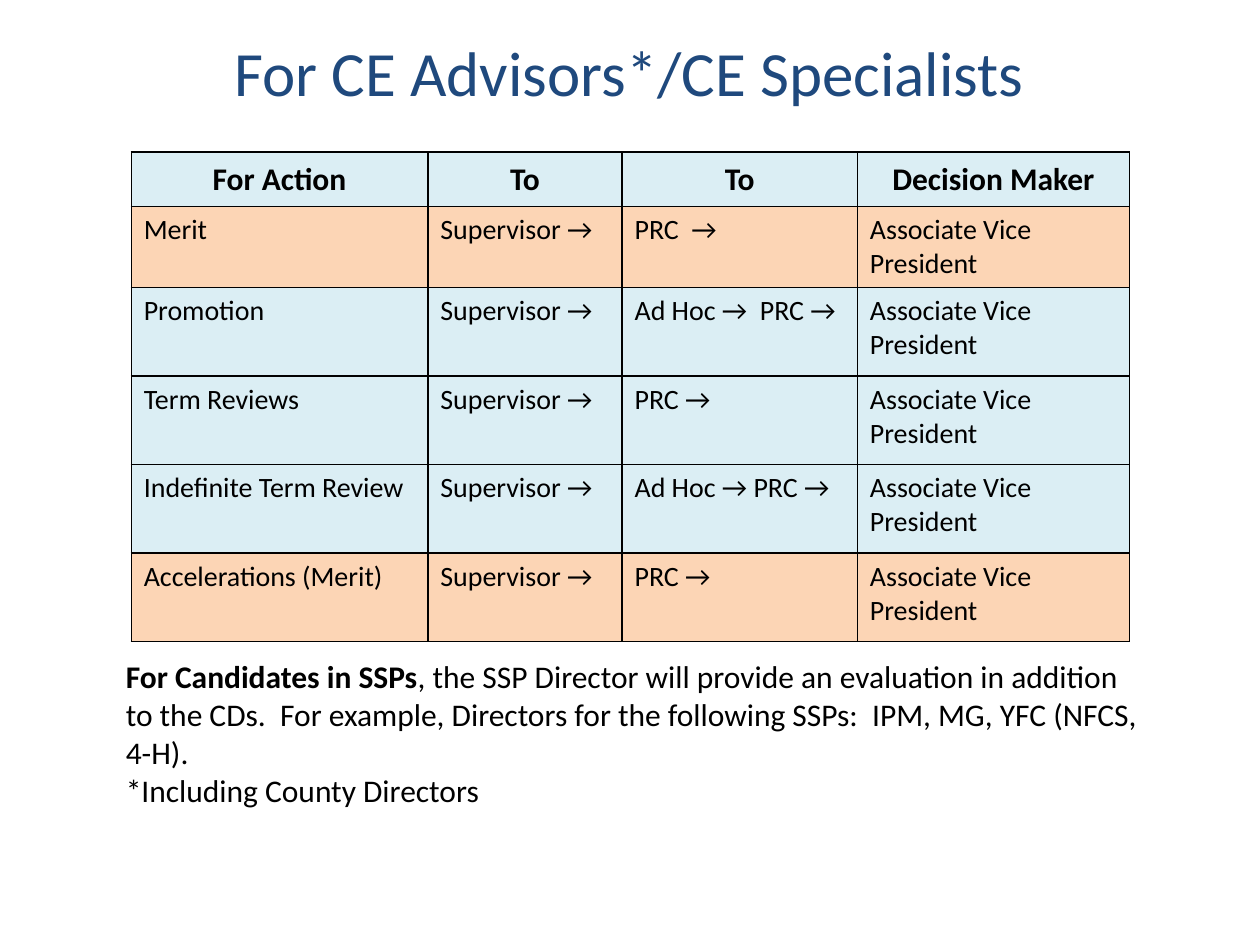
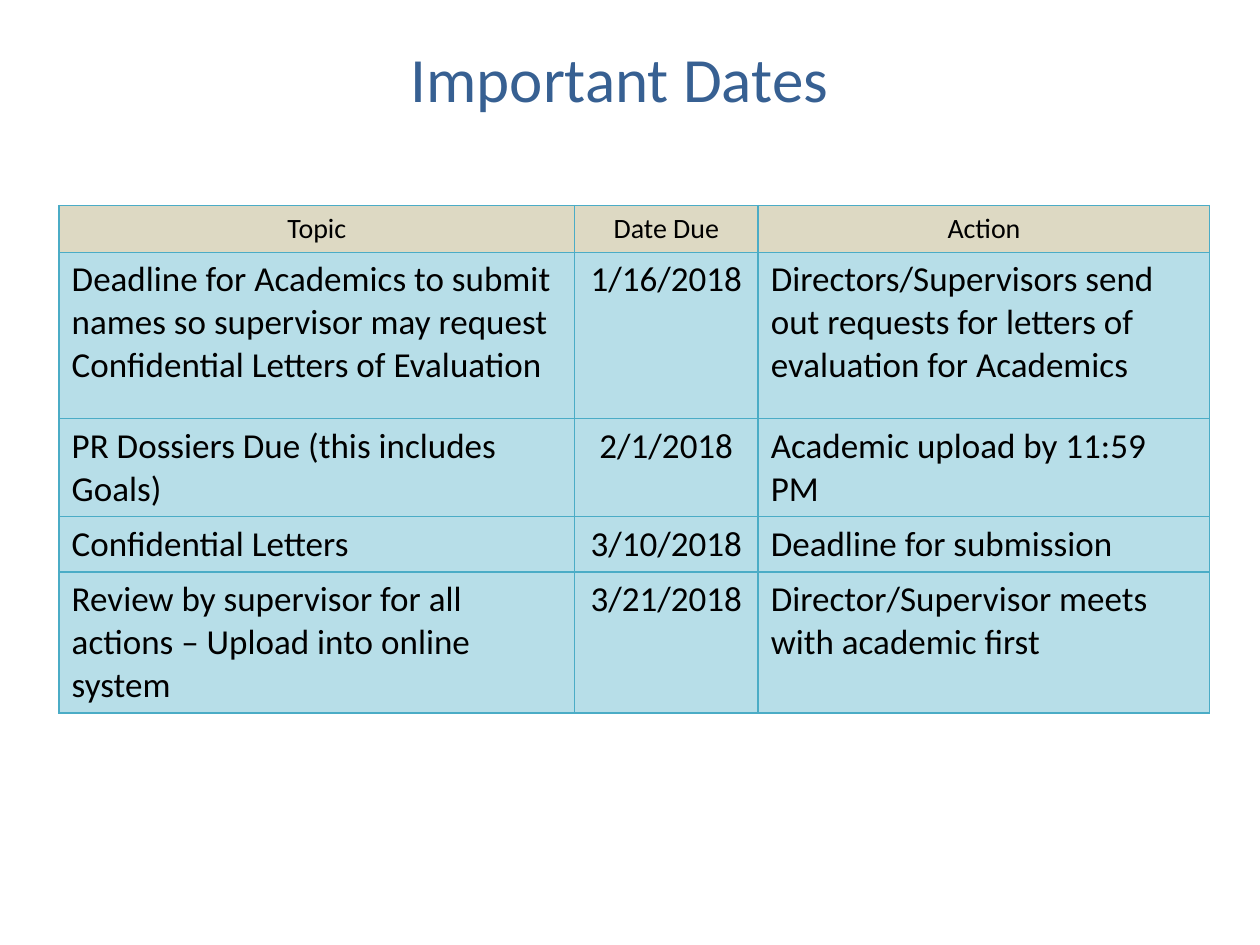
from lxml.etree import SubElement
from pptx import Presentation
from pptx.dml.color import RGBColor
from pptx.enum.text import MSO_ANCHOR, PP_ALIGN
from pptx.oxml.ns import qn
from pptx.util import Pt

BLACK, NAVY, BLUE, TEAL = "000000", "1F497D", "376092", "4BACC6"
ICE, PEACH, SAND, AQUA = "DBEEF4", "FCD5B5", "DDD9C3", "B7DEE8"


def color(value):
    return RGBColor.from_string(value)


class Deck:
    """Holds the text style and the slide being filled."""

    font_name = "Calibri"
    title_size = 36

    def __init__(self):
        self.presentation = Presentation()
        self.presentation.slide_width = Pt(720)
        self.presentation.slide_height = Pt(540)
        self.slide = None

    def add_slide(self):
        layout = self.presentation.slide_layouts[6]
        self.slide = self.presentation.slides.add_slide(layout)

    def fill_paragraph(self, paragraph, runs, size, text_color=BLACK,
                       align=PP_ALIGN.LEFT):
        """Fill a paragraph with (text, bold) runs."""
        paragraph.alignment = align
        for text, bold in runs:
            run = paragraph.add_run()
            run.text = text
            style = {"name": self.font_name, "size": Pt(size), "bold": bold}
            for attribute, value in style.items():
                setattr(run.font, attribute, value)
            run.font.color.rgb = color(text_color)

    def add_text(self, box, paragraphs, size, anchor=MSO_ANCHOR.TOP, **style):
        frame = self.slide.shapes.add_textbox(*map(Pt, box)).text_frame
        frame.word_wrap = True
        frame.vertical_anchor = anchor
        for index, runs in enumerate(paragraphs):
            paragraph = frame.add_paragraph() if index else frame.paragraphs[0]
            self.fill_paragraph(paragraph, runs, size, **style)

    def add_title(self, text, box, text_color):
        self.add_text(box, [[(text, False)]], self.title_size, MSO_ANCHOR.MIDDLE,
                      text_color=text_color, align=PP_ALIGN.CENTER)

    def add_borders(self, cell, line_color):
        """Draw a 1 pt line on every side; the lines must precede the fill."""
        properties = cell._tc.get_or_add_tcPr()
        for side in ("a:lnL", "a:lnR", "a:lnT", "a:lnB"):
            line = SubElement(properties, qn(side), w=str(Pt(1)))
            fill = SubElement(line, qn("a:solidFill"))
            SubElement(fill, qn("a:srgbClr"), val=line_color)

    def add_table(self, position, widths, heights, rows, fills, line_color,
                  sizes, header_bold=False, centered_columns=()):
        """Build a table; sizes holds the header and the body text size."""
        frame = self.slide.shapes.add_table(
            len(rows), len(widths), *map(Pt, position),
            Pt(sum(widths)), Pt(sum(heights)))
        table = frame.table
        table.first_row = table.horz_banding = False
        for column, width in zip(table.columns, widths):
            column.width = Pt(width)
        for row_index, (texts, height, fill) in enumerate(zip(rows, heights, fills)):
            header = row_index == 0
            table.rows[row_index].height = Pt(height)
            for column_index, text in enumerate(texts):
                cell = table.cell(row_index, column_index)
                self.add_borders(cell, line_color)
                cell.fill.solid()
                cell.fill.fore_color.rgb = color(fill)
                cell.vertical_anchor = MSO_ANCHOR.MIDDLE if header else MSO_ANCHOR.TOP
                centered = header or column_index in centered_columns
                self.fill_paragraph(cell.text_frame.paragraphs[0],
                                    [(text, header and header_bold)],
                                    sizes[0] if header else sizes[1],
                                    align=PP_ALIGN.CENTER if centered else PP_ALIGN.LEFT)


def add_review_routes(deck):
    deck.add_slide()
    deck.add_title("For CE Advisors*/CE Specialists", (74, 23, 571, 36), NAVY)
    routes = [
        ("Merit", "PRC  →"),
        ("Promotion", "Ad Hoc →  PRC →"),
        ("Term Reviews", "PRC →"),
        ("Indefinite Term Review", "Ad Hoc → PRC →"),
        ("Accelerations (Merit)", "PRC →"),
    ]
    rows = [("For Action", "To", "To", "Decision Maker")]
    rows += [(action, "Supervisor →", committee, "Associate Vice President")
             for action, committee in routes]
    deck.add_table((75, 87), (169.5, 111, 134.5, 155.5),
                   [31, 46.3] + [50.6] * 4, rows,
                   (ICE, PEACH, ICE, ICE, ICE, PEACH), BLACK, (18, 16),
                   header_bold=True)
    deck.add_text((64.8, 372, 600, 95), [
        [("For Candidates in SSPs", True),
         (", the SSP Director will provide an evaluation in addition to the CDs.  "
          "For example, Directors for the following SSPs:  IPM, MG, YFC (NFCS, 4-H).",
          False)],
        [("*Including County Directors", False)],
    ], 18)


def add_important_dates(deck):
    deck.add_slide()
    deck.add_title("Important Dates", (48, 26, 612, 36), BLUE)
    rows = [
        ("Topic", "Date Due", "Action"),
        ("Deadline for Academics to submit names so supervisor may request "
         "Confidential Letters of Evaluation", "1/16/2018",
         "Directors/Supervisors send out requests for letters of evaluation "
         "for Academics"),
        ("PR Dossiers Due (this includes Goals)", "2/1/2018",
         "Academic upload by 11:59 PM"),
        ("Confidential Letters", "3/10/2018", "Deadline for submission"),
        ("Review by supervisor for all actions – Upload into online system",
         "3/21/2018", "Director/Supervisor meets with academic first"),
    ]
    deck.add_table((33.8, 117.5), (294.5, 105, 258), (26.7, 95, 56, 31.7, 80.5),
                   rows, [SAND] + [AQUA] * 4, TEAL, (16, 20),
                   centered_columns=(1,))


def main():
    deck = Deck()
    add_review_routes(deck)
    add_important_dates(deck)
    deck.presentation.save("out.pptx")


if __name__ == "__main__":
    main()
